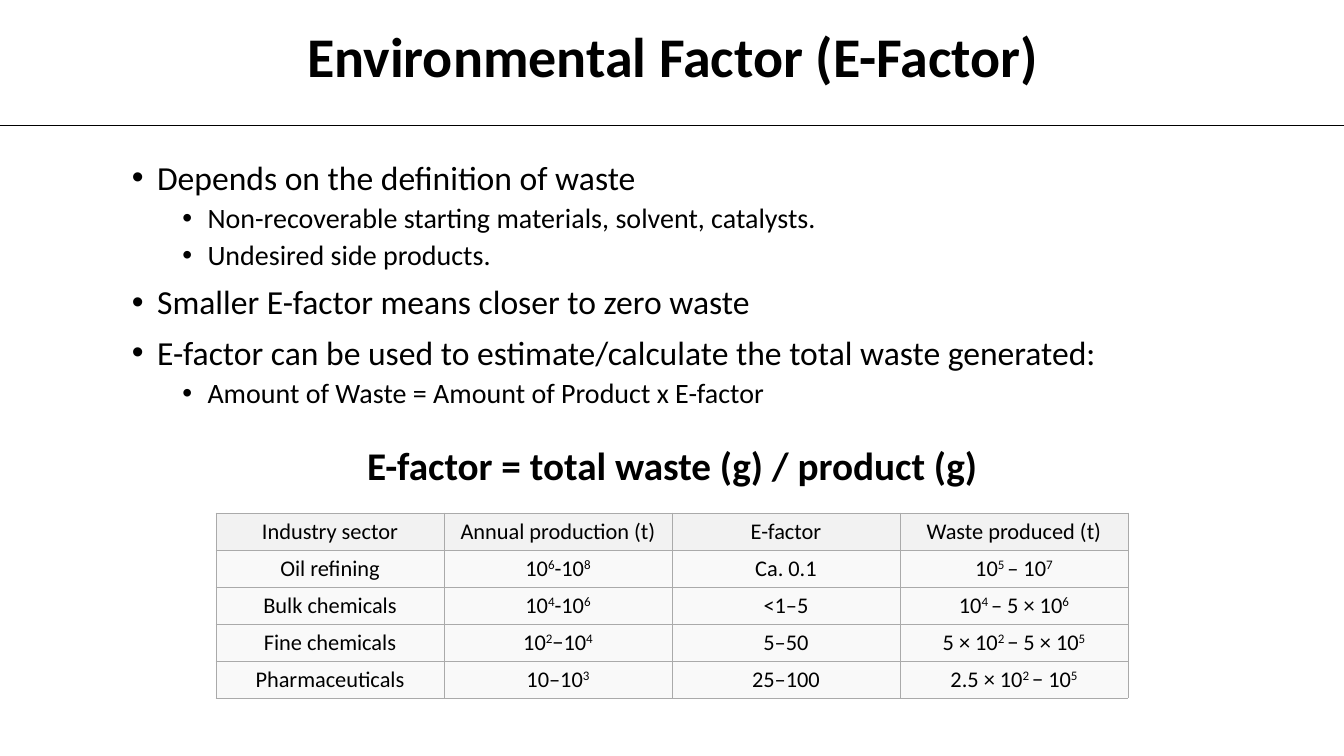
from lxml import etree
from pptx import Presentation
from pptx import util as u
from pptx.dml.color import RGBColor
from pptx.enum import shapes, text
from pptx.oxml import ns

BLACK = RGBColor(0x00, 0x00, 0x00)
BORDER = RGBColor(0xAA, 0xAA, 0xAA)
HEADER_FILL = RGBColor(0xF2, 0xF2, 0xF2)
BODY_FILL = RGBColor(0xF9, 0xF9, 0xF9)

EMU_PER_PX = 914400 / 100.8

BULLETS = [
    (0, "Depends on the definition of waste"),
    (1, "Non-recoverable starting materials, solvent, catalysts."),
    (1, "Undesired side products."),
    (0, "Smaller E-factor means closer to zero waste"),
    (0, "E-factor can be used to estimate/calculate the total waste generated:"),
    (1, "Amount of Waste = Amount of Product x E-factor"),
]

# Text between two carets is superscript
SECTORS = [
    ("Industry sector", "Annual production (t)", "E-factor", "Waste produced (t)"),
    ("Oil refining", "10^6^-10^8", "Ca. 0.1", "10^5 ^– 10^7"),
    ("Bulk chemicals", "10^4^-10^6", "<1–5", "10^4 ^– 5 × 10^6"),
    ("Fine chemicals", "10^2^−10^4", "5–50", "5 × 10^2 ^− 5 × 10^5"),
    ("Pharmaceuticals", "10–10^3", "25–100", "2.5 × 10^2 ^− 10^5"),
]


def px(length):
    return u.Emu(round(length * EMU_PER_PX))


class SlideBuilder:
    font = "Calibri"

    def __init__(self, presentation):
        self.slide = presentation.slides.add_slide(presentation.slide_layouts[6])

    def style(self, paragraph, size, bold=False):
        for run in paragraph.runs:
            run.font.name = self.font
            run.font.size = u.Pt(size)
            run.font.bold = bold
            run.font.color.rgb = BLACK

    def text_box(self, left, top, width, height, anchor):
        box = self.slide.shapes.add_textbox(px(left), px(top), px(width), px(height))
        frame = box.text_frame
        frame.word_wrap = True
        frame.vertical_anchor = anchor
        return frame

    def heading(self, words, left, top, width, height, size,
                anchor=text.MSO_ANCHOR.TOP, line_spacing=1.0):
        frame = self.text_box(left, top, width, height, anchor)
        frame.text = words
        paragraph = frame.paragraphs[0]
        paragraph.alignment = text.PP_ALIGN.CENTER
        paragraph.line_spacing = line_spacing
        self.style(paragraph, size, bold=True)

    def bullets(self, items, left, top, width, height):
        frame = self.text_box(left, top, width, height, text.MSO_ANCHOR.TOP)
        for index, (level, words) in enumerate(items):
            paragraph = frame.add_paragraph() if index else frame.paragraphs[0]
            paragraph.text = words
            paragraph.level = level
            paragraph.line_spacing = 0.9
            if index:
                paragraph.space_before = u.Pt(5 if level else 10)
            properties = paragraph._p.get_or_add_pPr()
            properties.set("marL", str(u.Inches(0.25 + 0.5 * level)))
            properties.set("indent", str(u.Inches(-0.25)))
            etree.SubElement(properties, ns.qn("a:buFont"), typeface="Arial")
            etree.SubElement(properties, ns.qn("a:buChar"), char="•")
            self.style(paragraph, 20 if level else 24)

    def cell_borders(self, cell):
        properties = cell._tc.get_or_add_tcPr()
        for side in ("lnL", "lnR", "lnT", "lnB"):
            line = etree.SubElement(properties, ns.qn(f"a:{side}"), w=str(u.Pt(0.6)))
            fill = etree.SubElement(line, ns.qn("a:solidFill"))
            etree.SubElement(fill, ns.qn("a:srgbClr"), val=str(BORDER))

    def table(self, rows, left, top, width, row_height):
        frame = self.slide.shapes.add_table(
            len(rows), len(rows[0]), px(left), px(top), px(width),
            px(row_height * len(rows)))
        table = frame.table
        table.first_row = table.horz_banding = False
        for row_index, row in enumerate(rows):
            table.rows[row_index].height = px(row_height)
            for column_index, words in enumerate(row):
                cell = table.cell(row_index, column_index)
                self.cell_borders(cell)
                cell.fill.solid()
                cell.fill.fore_color.rgb = BODY_FILL if row_index else HEADER_FILL
                cell.vertical_anchor = text.MSO_ANCHOR.MIDDLE
                cell.margin_top = cell.margin_bottom = px(4)
                paragraph = cell.text_frame.paragraphs[0]
                paragraph.alignment = text.PP_ALIGN.CENTER
                for part_index, part in enumerate(words.split("^")):
                    run = paragraph.add_run()
                    run.text = part
                    if part_index % 2:
                        run._r.get_or_add_rPr().set("baseline", "30000")
                self.style(paragraph, 16)

    def rule(self, left, top, right):
        line = self.slide.shapes.add_connector(
            shapes.MSO_CONNECTOR.STRAIGHT, px(left), px(top), px(right), px(top))
        line.line.color.rgb = BLACK
        line.line.width = u.Pt(0.5)
        etree.SubElement(line._element.spPr, ns.qn("a:effectLst"))


def main():
    presentation = Presentation()
    presentation.slide_width = px(1344)
    presentation.slide_height = px(756)
    builder = SlideBuilder(presentation)

    # Title and divider
    builder.heading("Environmental Factor (E-Factor)", 93, 23, 1159, 72, 40,
                    text.MSO_ANCHOR.MIDDLE, 0.9)
    builder.rule(0, 125, 1344)

    # Explanation
    builder.bullets(BULLETS, 122, 156, 987, 261)

    # Formula and industry figures
    builder.heading("E-factor = total waste (g) / product (g)", 336, 436, 672, 57, 28)
    builder.table(SECTORS, 216, 513, 912, 37)

    presentation.save("out.pptx")


if __name__ == "__main__":
    main()
